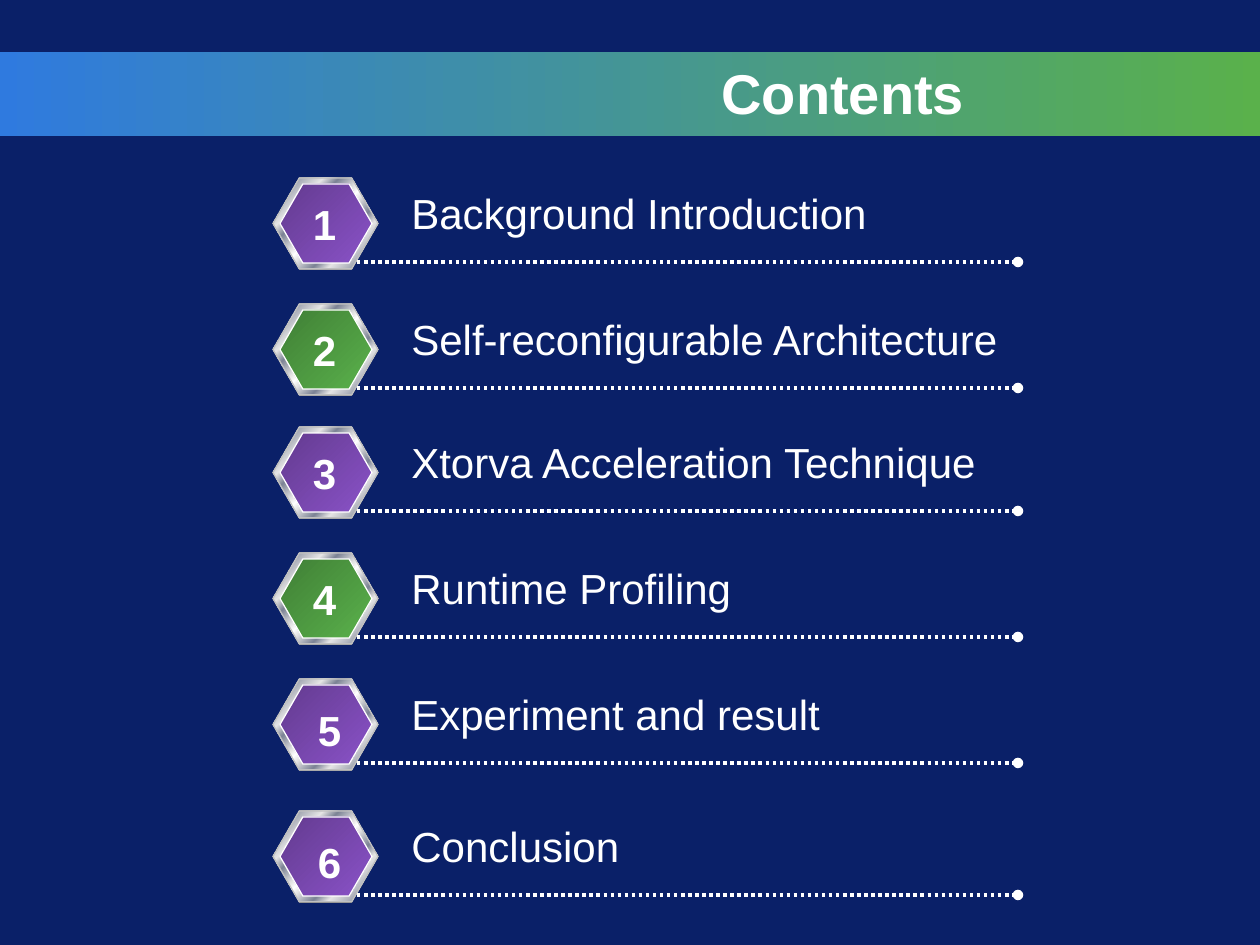
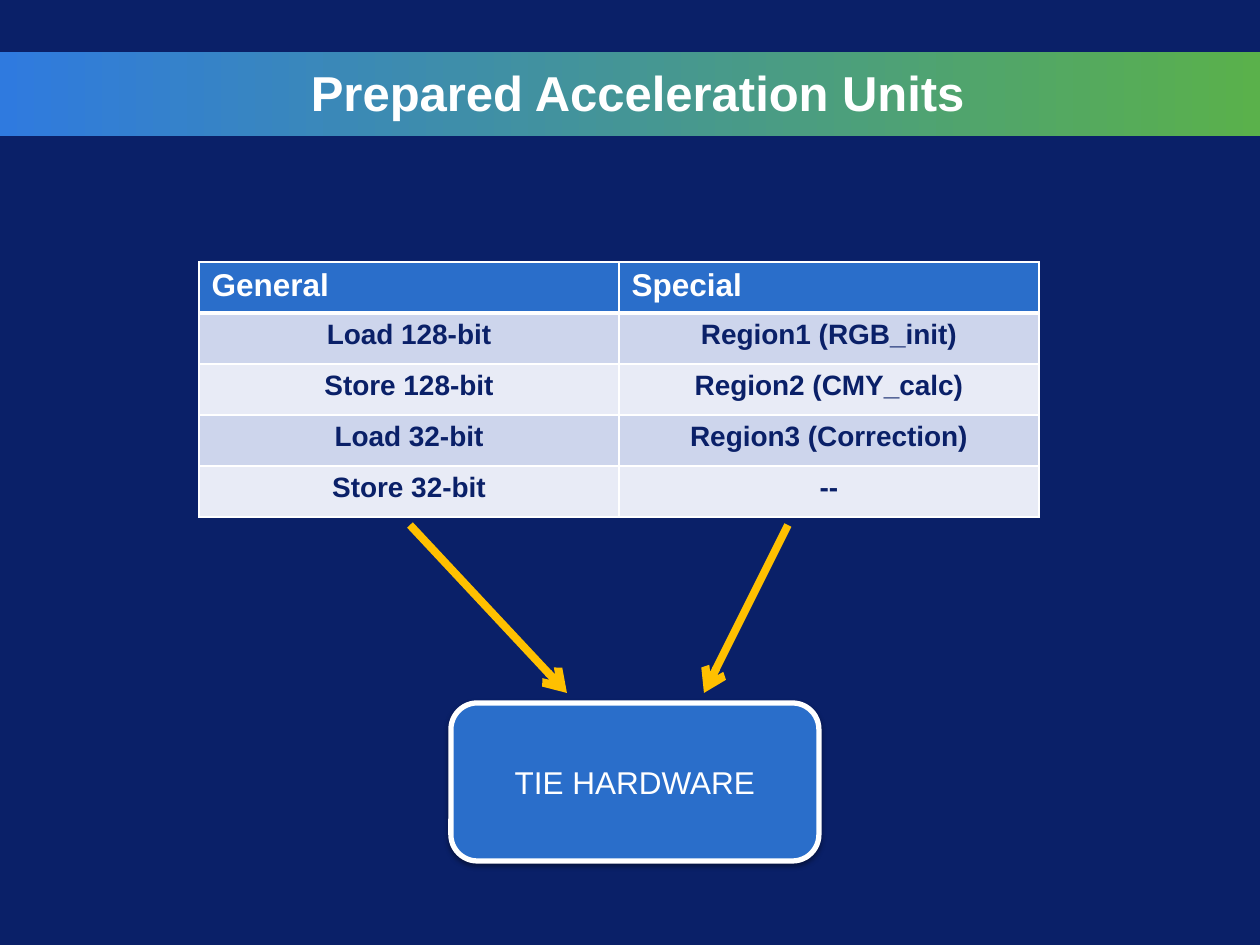
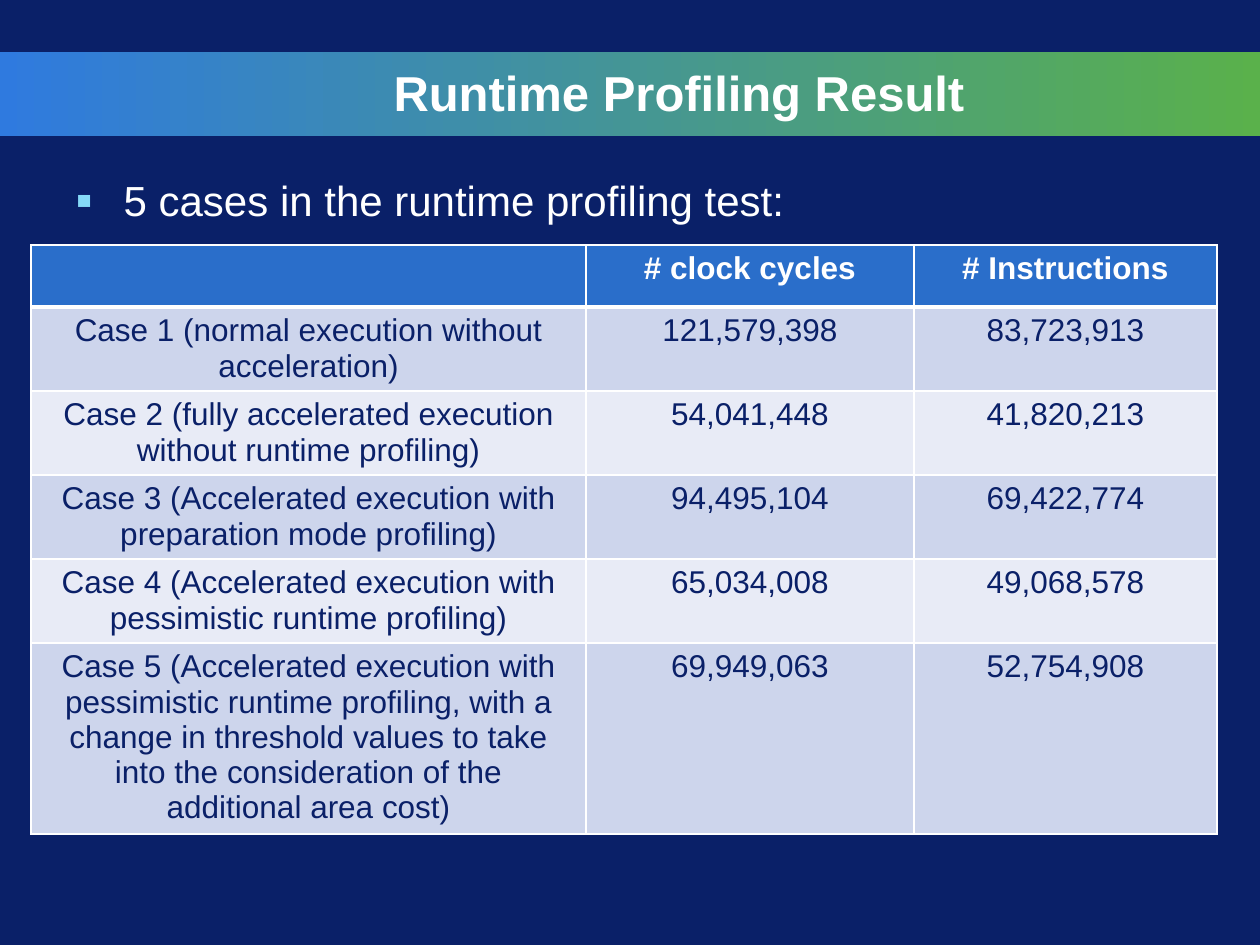
import pptx
import pptx.dml.color
import pptx.enum.dml
import pptx.enum.shapes
import pptx.enum.text
import pptx.oxml
import pptx.oxml.ns
import pptx.util
import lxml.etree

px = 914400 // 126
qn = pptx.oxml.ns.qn
shape_kind = pptx.enum.shapes.MSO_SHAPE
align = pptx.enum.text.PP_ALIGN
anchor = pptx.enum.text.MSO_ANCHOR

NAVY, WHITE, BLUE, GREEN = "0A2068", "FFFFFF", "2A6ECA", "5AB14B"
GOLD, SKY = "FFC000", "85D9F7"
STRIPES = ["CDD5EC", "E8EBF6"]
PURPLE_FACE = [(0, "633B8F"), (100, "8A52C8")]
GREEN_FACE = [(0, "407F36"), (100, GREEN)]
LIGHT, STEEL = "E6E6E6", "7D8496"
METAL = [(0, LIGHT), (7, STEEL), (26, LIGHT), (34, STEEL), (46, LIGHT), (50, WHITE),
         (54, LIGHT), (66, STEEL), (74, LIGHT), (93, STEEL), (100, LIGHT)]


def paint(owner, color, angle=0):
    if isinstance(color, str):
        owner.fill.solid()
        owner.fill.fore_color.rgb = pptx.dml.color.RGBColor.from_string(color)
        return
    owner.fill.gradient()
    owner.fill.gradient_angle = -angle % 360
    stops = owner.element.find(".//" + qn("a:gsLst"))
    for stop in list(stops):
        stops.remove(stop)
    for position, value in color:
        stop = lxml.etree.SubElement(stops, qn("a:gs"), pos=str(position * 1000))
        lxml.etree.SubElement(stop, qn("a:srgbClr"), val=value)


def write(frame, text, size=24, color=WHITE, bold=False, alignment=align.LEFT):
    para = frame.paragraphs[0]
    para.alignment = alignment
    para.space_before = pptx.util.Pt(0)
    span = para.add_run()
    span.text = text
    span.font.name = "Arial"
    span.font.size = pptx.util.Pt(size)
    span.font.bold = bold
    paint(span.font, color)


deck = pptx.Presentation()
deck.slide_width = 1260 * px
deck.slide_height = 945 * px
master = deck.slide_master
paint(master.background, NAVY)

pages = []
for title, size, layout in [("Contents", 32, 5), ("Prepared Acceleration Units", 28, 5),
                            ("Runtime Profiling Result", 28, 1)]:
    page = deck.slides.add_slide(deck.slide_layouts[layout])
    heading = page.shapes.title
    heading.left, heading.top, heading.width, heading.height = 63 * px, 53 * px, 914 * px, 78 * px
    heading.text_frame.vertical_anchor = anchor.MIDDLE
    write(heading.text_frame, title, size=size, bold=True, alignment=align.RIGHT)
    pages.append(page)
contents, units, results = pages

band = contents.shapes.add_shape(shape_kind.RECTANGLE, 0, 52 * px, 1260 * px, 84 * px)
band.shadow.inherit = False
band.line.fill.background()
paint(band, [(0, "2F7ADF"), (100, GREEN)])
master.shapes.element.insert(2, band.element)

connectors = []
chapters = [
    (178, "Background Introduction", 485, PURPLE_FACE, 0),
    (304, "Self-reconfigurable Architecture", 617, GREEN_FACE, 0),
    (427, "Xtorva Acceleration Technique", 605, PURPLE_FACE, 0),
    (553, "Runtime Profiling", 349, GREEN_FACE, 0),
    (679, "Experiment and result", 438, PURPLE_FACE, 5),
    (811, "Conclusion", 236, PURPLE_FACE, 5),
]
for number, (top, chapter, width, face, nudge) in enumerate(chapters, 1):
    badge = contents.shapes.add_group_shape()
    for left, offset, across, down, color, edge in [
            (273, 1, 105, 91, "808080", None),
            (273, 0, 105, 91, METAL, "C0C0C0"),
            (280, 6, 92, 79, face, WHITE)]:
        hexagon = badge.shapes.add_shape(
            shape_kind.HEXAGON, left * px, (top + offset) * px, across * px, down * px)
        hexagon.shadow.inherit = False
        hexagon.adjustments[0] = 0.289
        paint(hexagon, color, angle=45)
        if edge:
            paint(hexagon.line, edge)
            hexagon.line.width = pptx.util.Pt(0.75)
        else:
            hexagon.line.fill.background()
    for text, left, offset, across, bold, alignment in [
            (chapter, 399, 3, width, False, align.LEFT),
            (str(number), 300 + nudge, 14 + nudge, 49, True, align.CENTER)]:
        box = contents.shapes.add_textbox(left * px, (top + offset) * px, across * px, 63 * px)
        box.text_frame.word_wrap = False
        box.text_frame.auto_size = pptx.enum.text.MSO_AUTO_SIZE.SHAPE_TO_FIT_TEXT
        write(box.text_frame, text, bold=bold, alignment=alignment)
    connectors.append((contents, 357, top + 84, 1018, top + 84, WHITE, 2, "oval"))

hardware = units.shapes.add_shape(
    shape_kind.ROUNDED_RECTANGLE, 451 * px, 703 * px, 368 * px, 158 * px)
hardware.shadow.inherit = False
paint(hardware, BLUE)
paint(hardware.line, WHITE)
hardware.line.width = pptx.util.Pt(3)
hardware.text_frame.vertical_anchor = anchor.MIDDLE
write(hardware.text_frame, "TIE HARDWARE", size=18, alignment=align.CENTER)
shadow = lxml.etree.SubElement(
    hardware.element.spPr.find(qn("a:effectLst")), qn("a:outerShdw"),
    blurRad=str(pptx.util.Pt(3.1)), dist=str(pptx.util.Pt(1.6)), dir="5400000", rotWithShape="0")
shade = lxml.etree.SubElement(shadow, qn("a:srgbClr"), val="000000")
lxml.etree.SubElement(shade, qn("a:alpha"), val="38000")
connectors.append((units, 410, 525, 567, 693, GOLD, 4.5, "arrow"))
connectors.append((units, 788, 525, 704, 693, GOLD, 4.5, "arrow"))

body = results.placeholders[1]
body.left, body.top, body.width, body.height = 63 * px, 168 * px, 1134 * px, 714 * px
bullet = body.text_frame.paragraphs[0]._p.get_or_add_pPr()
bullet.set("marL", str(48 * px))
bullet.set("indent", str(-48 * px))
bullet_color = lxml.etree.SubElement(bullet, qn("a:buClr"))
lxml.etree.SubElement(bullet_color, qn("a:srgbClr"), val=SKY)
lxml.etree.SubElement(bullet, qn("a:buSzPct"), val="115000")
lxml.etree.SubElement(bullet, qn("a:buFont"), typeface="Arial")
lxml.etree.SubElement(bullet, qn("a:buChar"), char="▪")
write(body.text_frame, "5 cases in the runtime profiling test:")

unit_rows = [
    ("General", "Special"),
    ("Load 128-bit", "Region1 (RGB_init)"),
    ("Store 128-bit", "Region2 (CMY_calc)"),
    ("Load 32-bit", "Region3 (Correction)"),
    ("Store 32-bit", "--"),
]
case_rows = [
    ("", "# clock cycles", "# Instructions"),
    ("Case 1 (normal execution without acceleration)", "121,579,398", "83,723,913"),
    ("Case 2 (fully accelerated execution without runtime profiling)",
     "54,041,448", "41,820,213"),
    ("Case 3 (Accelerated execution with preparation mode profiling)",
     "94,495,104", "69,422,774"),
    ("Case 4 (Accelerated execution with pessimistic runtime profiling)",
     "65,034,008", "49,068,578"),
    ("Case 5 (Accelerated execution with pessimistic runtime profiling, with a change in "
     "threshold values to take into the consideration of the additional area cost)",
     "69,949,063", "52,754,908"),
]
for page, left, top, widths, heights, rows, body_size, body_bold, head_align in [
        (units, 199, 262, [420] * 2, [51] * 5, unit_rows, 16, True, align.LEFT),
        (results, 31, 245, [555, 328, 303], [62] + [84] * 4 + [191], case_rows, 18, False,
         align.CENTER)]:
    table = page.shapes.add_table(len(rows), len(widths), left * px, top * px,
                                  sum(widths) * px, sum(heights) * px).table
    table.horz_banding = False
    for column, width in zip(table.columns, widths):
        column.width = width * px
    for index, (height, texts) in enumerate(zip(heights, rows)):
        table.rows[index].height = height * px
        head = index == 0
        for cell, text in zip(table.rows[index].cells, texts):
            paint(cell, BLUE if head else STRIPES[(index - 1) % 2])
            if text:
                write(cell.text_frame, text, size=18 if head else body_size,
                      color=WHITE if head else NAVY, bold=head or body_bold,
                      alignment=head_align if head else align.CENTER)
            properties = cell._tc.get_or_add_tcPr()
            for place, side in enumerate("LRTB"):
                thick = (side == "B" and head) or (side == "T" and index == 1)
                border = lxml.etree.Element(
                    qn("a:ln" + side), w=str(pptx.util.Pt(3 if thick else 1)))
                border_fill = lxml.etree.SubElement(border, qn("a:solidFill"))
                lxml.etree.SubElement(border_fill, qn("a:srgbClr"), val=WHITE)
                properties.insert(place, border)

for page, left, top, right, bottom, color, weight, tip in connectors:
    connector = page.shapes.add_connector(
        pptx.enum.shapes.MSO_CONNECTOR.STRAIGHT, left * px, top * px, right * px, bottom * px)
    paint(connector.line, color)
    connector.line.width = pptx.util.Pt(weight)
    if tip == "oval":
        connector.line.dash_style = pptx.enum.dml.MSO_LINE.ROUND_DOT
    lxml.etree.SubElement(connector.line._get_or_add_ln(), qn("a:tailEnd"), type=tip)
    lxml.etree.SubElement(connector.element.spPr, qn("a:effectLst"))

deck.save("out.pptx")
